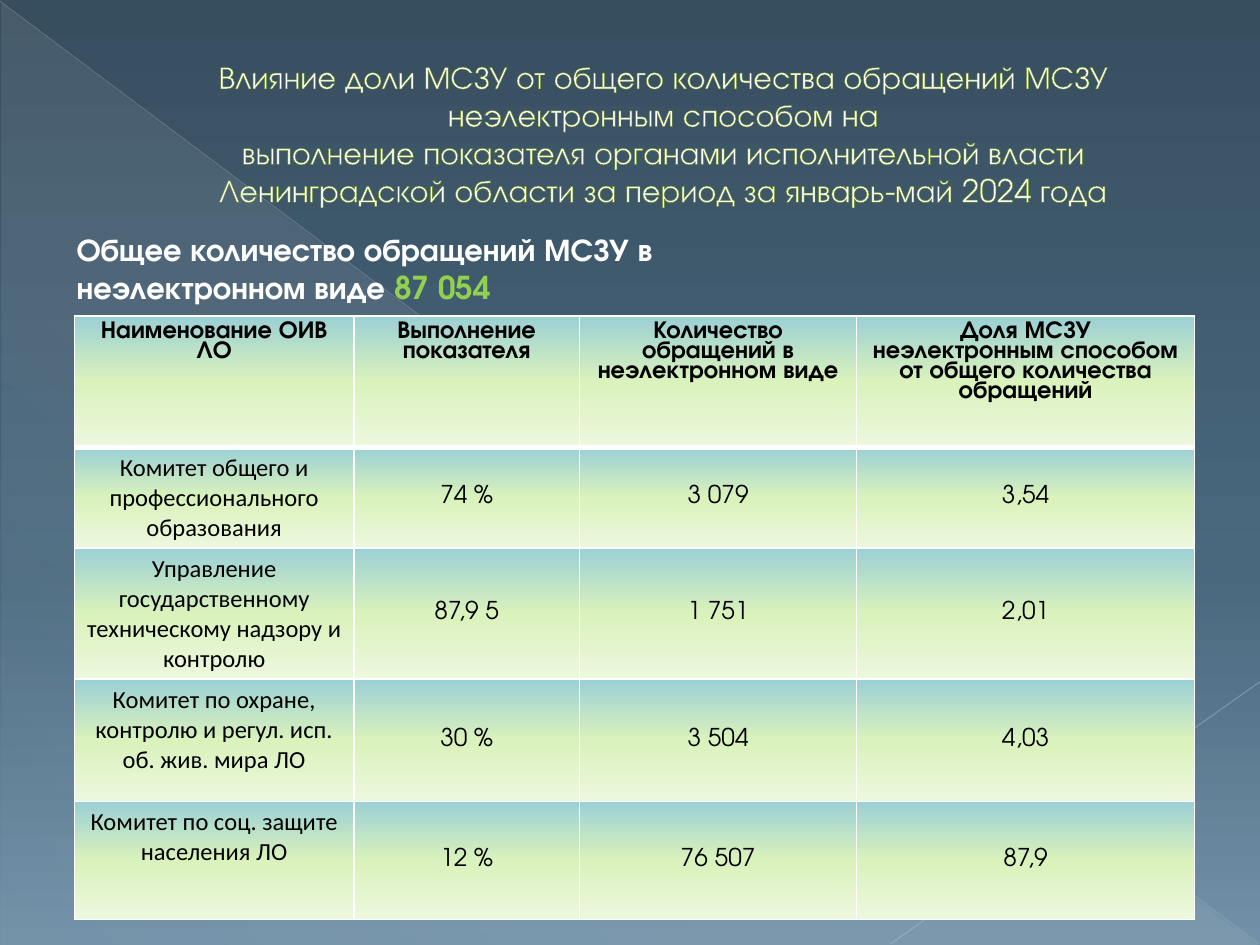
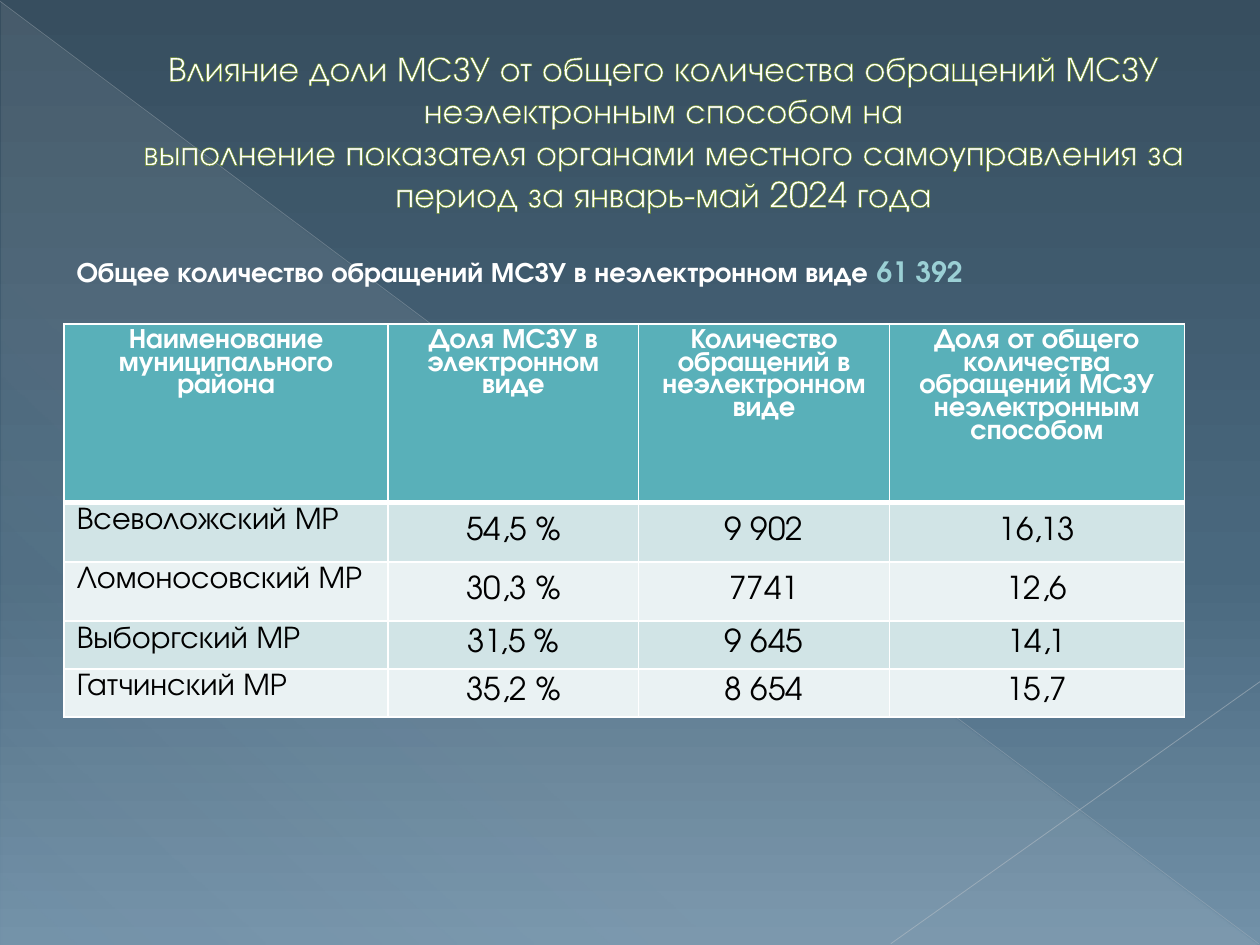
"""Builds two slides on the share of non-electronic requests, each with a table."""
from dataclasses import dataclass

import lxml.etree
import pptx
import pptx.dml.color
import pptx.dml.fill
import pptx.enum.shapes
import pptx.enum.text
import pptx.oxml
import pptx.oxml.ns
import pptx.presentation
import pptx.slide
import pptx.table
import pptx.text.text
import pptx.util

RGB = pptx.dml.color.RGBColor
Inches = pptx.util.Inches
Pt = pptx.util.Pt
qn = pptx.oxml.ns.qn
CENTER = pptx.enum.text.PP_ALIGN.CENTER
LEFT = pptx.enum.text.PP_ALIGN.LEFT
TOP = pptx.enum.text.MSO_ANCHOR.TOP
MIDDLE = pptx.enum.text.MSO_ANCHOR.MIDDLE
SIZING = pptx.enum.text.MSO_AUTO_SIZE

WHITE = RGB(0xFF, 0xFF, 0xFF)
BLACK = RGB(0x00, 0x00, 0x00)
OLIVE = RGB(0x69, 0x8A, 0x18)
GREEN = RGB(0x92, 0xD0, 0x50)
AQUA = RGB(0x9B, 0xD0, 0xD5)
TEAL = RGB(0x59, 0xB0, 0xB9)
BAND = RGB(0xD1, 0xE4, 0xE6)
PALE = RGB(0xEA, 0xF2, 0xF3)
MIST = RGB(0xE7, 0xEC, 0xED)
MAIN_FONT = "TeX Gyre Adventor"
NAME_FONT = "Calibri"
TIGHT = 0.88


@dataclass(frozen=True)
class Stop:
    """A colour in a gradient, with place and opacity in percent."""
    place: int
    color: RGB
    alpha: int = 100


Blend = tuple[Stop, ...]
SKY: Blend = (Stop(0, RGB(0x37, 0x4E, 0x5F)), Stop(60, RGB(0x49, 0x68, 0x7E)),
              Stop(100, RGB(0x72, 0x91, 0xA8)))
HAZE: Blend = (Stop(0, MIST, 10), Stop(70, MIST, 8), Stop(100, MIST, 1))
MEADOW: Blend = (Stop(0, AQUA), Stop(50, RGB(0xDA, 0xF2, 0xBC)),
                 Stop(100, RGB(0xEC, 0xF8, 0xDE)))


@dataclass(frozen=True)
class Ray:
    """A thin line of the backdrop."""
    start: tuple[float, float]
    end: tuple[float, float]
    color: RGB
    width: float
    alpha: int


RAYS = (Ray((0, 0.01), (9.99, 7.49), RGB(0xBA, 0xC0, 0xC6), 0.39, 35),
        Ray((10, 5.41), (7.07, 7.49), RGB(0xC2, 0xC7, 0xCC), 0.47, 45))


@dataclass(frozen=True)
class Total:
    """The line above a table that gives the sum."""
    label: str
    value: str
    color: RGB
    box: tuple[float, float, float, float]
    size: int
    wrap: bool


@dataclass(frozen=True)
class Grid:
    """A table with its look."""
    left: float
    top: float
    widths: tuple[float, ...]
    heights: tuple[float, ...]
    rows: tuple[tuple[str, ...], ...]
    head_size: int
    head_color: RGB
    body_size: int
    name_font: str
    name_align: int
    name_space: float
    fills: tuple[RGB | Blend, ...]


@dataclass(frozen=True)
class Page:
    """All that one slide holds."""
    title: str
    title_size: int
    title_height: float
    total: Total
    grid: Grid


LABEL = "Общее количество обращений МСЗУ в неэлектронном виде "
OPENING = "Влияние доли МСЗУ от общего количества обращений МСЗУ неэлектронным способом на\v"

PAGES = (
    Page(
        OPENING + "выполнение показателя органами исполнительной власти "
        "Ленинградской области за период за январь-май 2024 года",
        18, 1.53,
        Total(LABEL, "87 054", GREEN, (0.51, 1.78, 5.28, 0.71), 18, True),
        Grid(0.59, 2.51, (2.22, 1.79, 2.2, 2.68), (1.04, 0.79, 1.04, 0.97, 0.94), (
            ("Наименование ОИВ ЛО", "Выполнение показателя",
             "Количество обращений в неэлектронном виде",
             "Доля МСЗУ неэлектронным способом от общего количества обращений"),
            ("Комитет общего и профессионального образования", "74 %", "3 079", "3,54"),
            ("Управление государственному техническому надзору и контролю",
             "87,9 5", "1 751", "2,01"),
            ("Комитет по охране, контролю и регул. исп. об. жив. мира ЛО",
             "30 %", "3 504", "4,03"),
            ("Комитет по соц. защите населения ЛО", "12 %", "76 507", "87,9"),
        ), 14, BLACK, 14, NAME_FONT, CENTER, 1.0, (MEADOW,) * 3)),
    Page(
        OPENING + "выполнение показателя органами местного самоуправления "
        "за период за январь-май 2024 года",
        20, 1.49,
        Total(LABEL, "61 392", AQUA, (0.51, 1.97, 7.97, 0.37), 16, False),
        Grid(0.51, 2.57, (2.57, 1.99, 1.99, 2.34), (1.42, 0.47, 0.47, 0.38, 0.38), (
            ("Наименование муниципального района", "Доля МСЗУ в электронном виде",
             "Количество обращений в неэлектронном виде",
             "Доля от общего количества обращений МСЗУ неэлектронным способом"),
            ("Всеволожский МР", "54,5 %", "9 902", "16,13"),
            ("Ломоносовский МР", "30,3 %", "7741", "12,6"),
            ("Выборгский МР", "31,5 %", "9 645", "14,1"),
            ("Гатчинский МР", "35,2 %", "8 654", "15,7"),
        ), 16, WHITE, 18, MAIN_FONT, LEFT, TIGHT, (TEAL, BAND, PALE))),
)


def add_tint(parent: lxml.etree._Element, color: RGB, alpha: int = 100) -> None:
    """Add a colour with its opacity to an XML parent."""
    tint = lxml.etree.SubElement(parent, qn("a:srgbClr"), val=str(color))
    if alpha < 100:
        lxml.etree.SubElement(tint, qn("a:alpha"), val=str(alpha * 1000))


def make_line(tag: str, color: RGB, width: float) -> lxml.etree._Element:
    """Return a solid line element for a cell side or a letter outline."""
    line = pptx.oxml.parse_xml(f'<a:{tag} {pptx.oxml.ns.nsdecls("a")} w="{Pt(width)}"/>')
    add_tint(lxml.etree.SubElement(line, qn("a:solidFill")), color)
    return line


def blend_fill(fill: pptx.dml.fill.FillFormat, holder: lxml.etree._Element,
               stops: Blend, angle: int = 90) -> None:
    """Give a fill a linear gradient; the angle runs clockwise."""
    fill.gradient()
    fill.gradient_angle = 360 - angle
    stop_list = next(holder.iter(qn("a:gsLst")))
    for old in list(stop_list):
        stop_list.remove(old)
    for stop in stops:
        mark = lxml.etree.SubElement(stop_list, qn("a:gs"), pos=str(stop.place * 1000))
        add_tint(mark, stop.color, stop.alpha)


def set_font(par: pptx.text.text._Paragraph, size: int, color: RGB,
             bold: bool = False, name: str = MAIN_FONT) -> None:
    """Set the font of a whole paragraph."""
    par.font.size, par.font.bold, par.font.name = Pt(size), bold, name
    par.font.color.rgb = color


def dress_master(deck: pptx.presentation.Presentation, slide: pptx.slide.Slide) -> None:
    """Put the gradient, the triangle and the rays on the slide master."""
    master = deck.slide_master
    blend_fill(master.background.fill, master.element, SKY)
    wedge = slide.shapes.add_shape(pptx.enum.shapes.MSO_SHAPE.RIGHT_TRIANGLE,
                                   Inches(0.01), Inches(0.02), Inches(9.98), Inches(7.48))
    wedge.shadow.inherit = False
    wedge.line.fill.background()
    blend_fill(wedge.fill, wedge.element, HAZE, 133)
    parts = [wedge]
    for ray in RAYS:
        line = slide.shapes.add_connector(pptx.enum.shapes.MSO_CONNECTOR.STRAIGHT,
                                          *map(Inches, ray.start + ray.end))
        line.line.width = Pt(ray.width)
        line.line.color.rgb = ray.color
        tint = next(line.element.iter(qn("a:srgbClr")))
        lxml.etree.SubElement(tint, qn("a:alpha"), val=str(ray.alpha * 1000))
        lxml.etree.SubElement(line.element.spPr, qn("a:effectLst"))
        parts.append(line)
    for index, part in enumerate(parts):
        part.element[0][0].set("id", str(100 + index))
        master.shapes.element.insert(2 + index, part.element)


def set_title(slide: pptx.slide.Slide, page: Page) -> None:
    """Place and style the slide title."""
    title = slide.shapes.title
    title.left, title.top = Inches(0.5), Inches(0.29)
    title.width, title.height = Inches(9), Inches(page.title_height)
    frame = title.text_frame
    frame.text = page.title
    frame.word_wrap, frame.auto_size = True, SIZING.NONE
    frame.vertical_anchor = MIDDLE
    par = frame.paragraphs[0]
    par.alignment = CENTER
    set_font(par, page.title_size, WHITE)
    par._p.get_or_add_pPr().set("marL", str(Inches(0.53)))
    for run in par.runs:
        run._r.get_or_add_rPr().insert(0, make_line("ln", OLIVE, 0.5))


def add_total(slide: pptx.slide.Slide, total: Total) -> None:
    """Add the line with the sum in its own colour."""
    frame = slide.shapes.add_textbox(*map(Inches, total.box)).text_frame
    frame.word_wrap, frame.auto_size = total.wrap, SIZING.SHAPE_TO_FIT_TEXT
    par = frame.paragraphs[0]
    set_font(par, total.size, WHITE, True)
    par.add_run().text = total.label
    value = par.add_run()
    value.text = total.value
    value.font.color.rgb = total.color


def style_cell(cell: pptx.table._Cell, grid: Grid, row: int, col: int) -> None:
    """Set text style, fill and borders by the cell's place."""
    is_head, is_name = row == 0, row > 0 and col == 0
    par = cell.text_frame.paragraphs[0]
    par.alignment = grid.name_align if is_name else CENTER
    par.line_spacing = grid.name_space if is_name else TIGHT
    cell.vertical_anchor = TOP if is_head or is_name else MIDDLE
    set_font(par, grid.head_size if is_head else grid.body_size,
             grid.head_color if is_head else BLACK, is_head,
             grid.name_font if is_name else MAIN_FONT)
    look = grid.fills[0 if is_head else 2 - row % 2]
    if isinstance(look, RGB):
        cell.fill.solid()
        cell.fill.fore_color.rgb = look
    else:
        blend_fill(cell.fill, cell._tc, look)
    sides = {"lnL": 1, "lnR": 1, "lnT": 3 if row == 1 else 1, "lnB": 3 if is_head else 1}
    for index, (tag, width) in enumerate(sides.items()):
        cell._tc.get_or_add_tcPr().insert(index, make_line(tag, WHITE, width))


def add_grid(slide: pptx.slide.Slide, grid: Grid) -> None:
    """Add the table."""
    table = slide.shapes.add_table(
        len(grid.rows), len(grid.widths), Inches(grid.left), Inches(grid.top),
        Inches(sum(grid.widths)), Inches(sum(grid.heights))).table
    for column, width in zip(table.columns, grid.widths):
        column.width = Inches(width)
    for line, height in zip(table.rows, grid.heights):
        line.height = Inches(height)
    for row, texts in enumerate(grid.rows):
        for col, text in enumerate(texts):
            cell = table.cell(row, col)
            cell.text = text
            style_cell(cell, grid, row, col)


def main() -> None:
    """Build and save the deck."""
    deck = pptx.Presentation()
    deck.slide_width, deck.slide_height = Inches(10), Inches(7.5)
    for index, page in enumerate(PAGES):
        slide = deck.slides.add_slide(deck.slide_layouts.get_by_name("Title Only"))
        if index == 0:
            dress_master(deck, slide)
        set_title(slide, page)
        add_total(slide, page.total)
        add_grid(slide, page.grid)
    deck.save("out.pptx")


if __name__ == "__main__":
    main()
